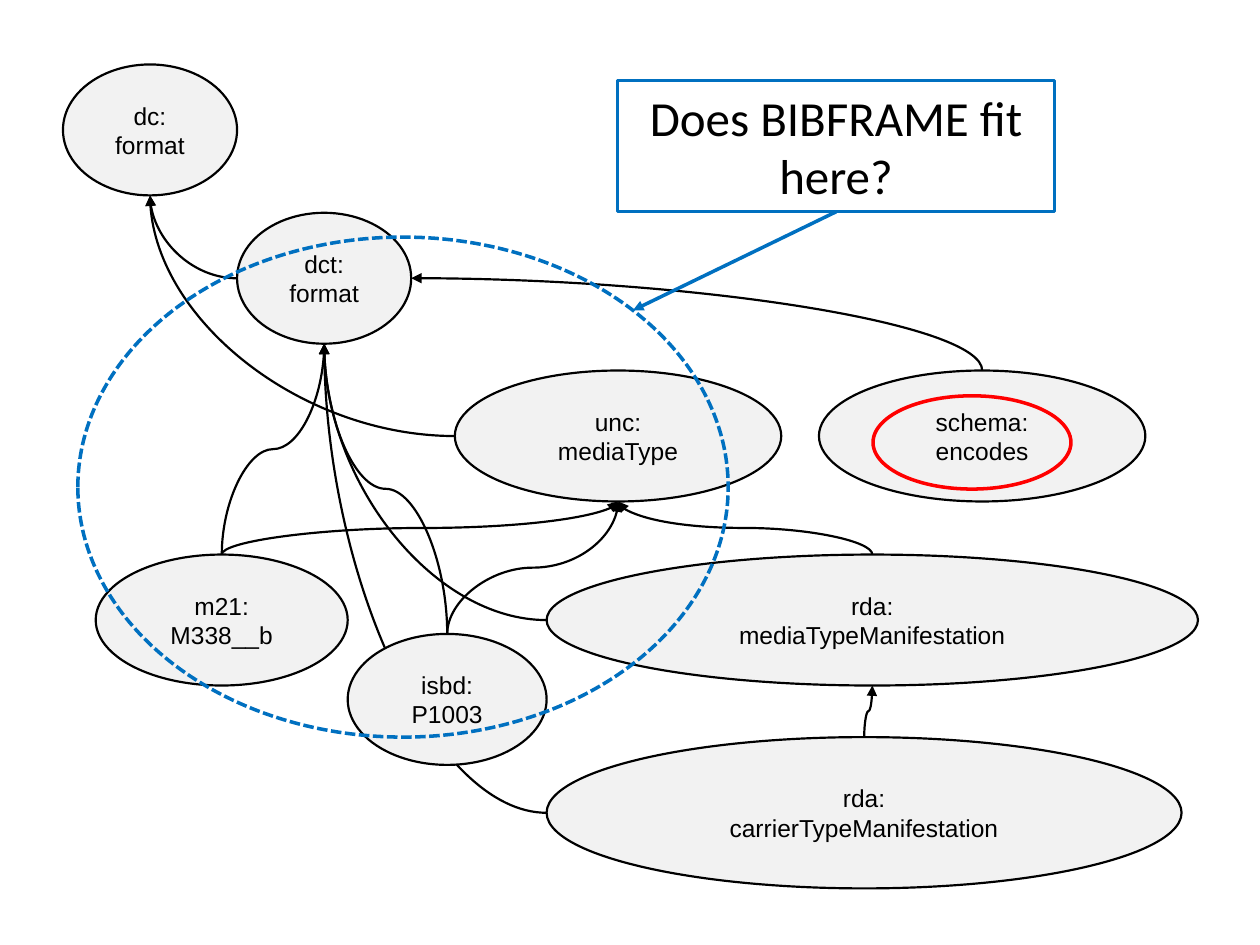
from math import sqrt

from lxml.etree import SubElement
from pptx import Presentation
from pptx.dml.color import RGBColor
from pptx.enum.dml import MSO_LINE
from pptx.enum.shapes import MSO_CONNECTOR, MSO_SHAPE
from pptx.enum.text import MSO_ANCHOR, PP_ALIGN
from pptx.oxml.ns import qn
from pptx.util import Cm, Pt

COLORS = {"ink": "000000", "node": "F2F2F2", "blue": "0070C0", "red": "FF0000"}

# name: (prefix, term, left, top, width, height) in cm inside the graph
NODES = {
    "m21": ("m21:", "M338__b", 0.66, 9.88, 5.08, 2.64),
    "carrier": ("rda:", "carrierTypeManifestation", 9.75, 13.56, 12.8, 3.05),
    "media": ("rda:", "mediaTypeManifestation", 9.75, 9.88, 13.13, 2.64),
    "dct": ("dct:", "format", 3.51, 2.99, 3.51, 2.64),
    "dc": ("dc:", "format", 0, 0, 3.51, 2.64),
    "unc": ("unc:", "mediaType", 7.9, 6.17, 6.58, 2.64),
    "isbd": ("isbd:", "P1003", 5.74, 11.48, 4.01, 2.64),
    "schema": ("schema:", "encodes", 15.24, 6.17, 6.58, 2.64),
}

# (start node, side, end node, side)
LINKS = [
    ("m21", "top", "unc", "bottom"),
    ("media", "top", "unc", "bottom"),
    ("carrier", "top", "media", "bottom"),
    ("isbd", "top", "unc", "bottom"),
    ("dct", "left", "dc", "bottom"),
    ("unc", "left", "dc", "bottom"),
    ("carrier", "left", "dct", "bottom"),
    ("media", "left", "dct", "bottom"),
    ("isbd", "top", "dct", "bottom"),
    ("m21", "top", "dct", "bottom"),
    ("schema", "top", "dct", "right"),
]


def color(name):
    return RGBColor.from_string(COLORS[name])


def add_form(slide, kind, box, line, width, fill=None):
    form = slide.shapes.add_shape(kind, *map(Cm, box))
    form.shadow.inherit = False
    if fill:
        form.fill.solid()
        form.fill.fore_color.rgb = color(fill)
    else:
        form.fill.background()
    form.line.color.rgb = color(line)
    form.line.width = Pt(width)
    return form


def add_text(form, lines, font, size):
    frame = form.text_frame
    frame.word_wrap = True
    for i, line in enumerate(lines):
        para = frame.add_paragraph() if i else frame.paragraphs[0]
        para.alignment = PP_ALIGN.CENTER
        run = para.add_run()
        run.text = line
        run.font.name = font
        run.font.size = Pt(size)
        run.font.color.rgb = color("ink")
    return frame


def add_arrow(slide, kind, start, end, line, width):
    arrow = slide.shapes.add_connector(kind, *map(Cm, (*start, *end)))
    arrow.line.color.rgb = color(line)
    arrow.line.width = Pt(width)
    SubElement(arrow.line._get_or_add_ln(), qn("a:tailEnd"), type="triangle")
    SubElement(arrow._element.spPr, qn("a:effectLst"))
    return arrow


def add_curve(slide, start, end, leave, enter):
    """Draw a rising curve; its frame is turned when it leaves upwards."""
    (x1, y1), (x2, y2) = start, end
    wide, high = abs(x2 - x1), abs(y2 - y1)
    turn, flips = 180, ()
    if leave == "top":
        wide, high = high, wide
        turn, flips = (90, ("flipH", "flipV")) if x2 > x1 else (270, ("flipV",))
    left, top = (x1 + x2 - wide) / 2, (y1 + y2 - high) / 2
    curve = add_arrow(slide, MSO_CONNECTOR.CURVE, (left, top),
                      (left + wide, top + high), "ink", 1.25)
    props = curve._element.spPr
    frame = props.find(qn("a:xfrm"))
    frame.set("rot", str(turn * 60000))
    for flip in flips:
        frame.set(flip, "1")
    if (leave, enter) != ("top", "bottom"):
        props.find(qn("a:prstGeom")).set("prst", "curvedConnector2")


def add_graph(slide, left, top):
    def place(name):
        x, y, wide, high = NODES[name][2:]
        return left + x, top + y, wide, high

    def site(name, side):
        x, y, wide, high = place(name)
        across, down = {"top": (0.5, 0), "left": (0, 0.5),
                        "bottom": (0.5, 1), "right": (1, 0.5)}[side]
        return x + wide * across, y + high * down

    for first, leave, last, enter in LINKS:
        add_curve(slide, site(first, leave), site(last, enter), leave, enter)
    for name, (prefix, term, *_) in NODES.items():
        node = add_form(slide, MSO_SHAPE.OVAL, place(name), "ink", 1.25, "node")
        frame = add_text(node, (prefix, term), "Arial", 14)
        frame.vertical_anchor = MSO_ANCHOR.MIDDLE
        frame.margin_left = frame.margin_right = 0
        frame.margin_top = frame.margin_bottom = 0


def add_query(slide, box, ring):
    """Add the question box, the dashed ring and the arrow between them."""
    note = add_form(slide, MSO_SHAPE.RECTANGLE, box, "blue", 1.5)
    frame = add_text(note, ["Does BIBFRAME fit here?"], "Calibri", 28)
    frame.vertical_anchor = MSO_ANCHOR.TOP
    x, y, wide, high = box
    left, top, across, down = ring
    slant = sqrt(0.5)
    edge = left + across * (1 + slant) / 2, top + down * (1 - slant) / 2
    add_arrow(slide, MSO_CONNECTOR.STRAIGHT, (x + wide / 2, y + high), edge,
              "blue", 2)
    loop = add_form(slide, MSO_SHAPE.OVAL, ring, "blue", 2)
    loop.line.dash_style = MSO_LINE.SQUARE_DOT


def main():
    deck = Presentation()
    deck.slide_width, deck.slide_height = Cm(25.4), Cm(19.05)
    slide = deck.slides.add_slide(deck.slide_layouts[6])
    add_graph(slide, 1.27, 1.3)
    add_form(slide, MSO_SHAPE.OVAL, (17.6, 7.98, 3.99, 1.88), "red", 2)
    add_query(slide, (12.45, 1.63, 8.81, 2.64), (1.57, 4.78, 13.11, 10.08))
    deck.save("out.pptx")


if __name__ == "__main__":
    main()
